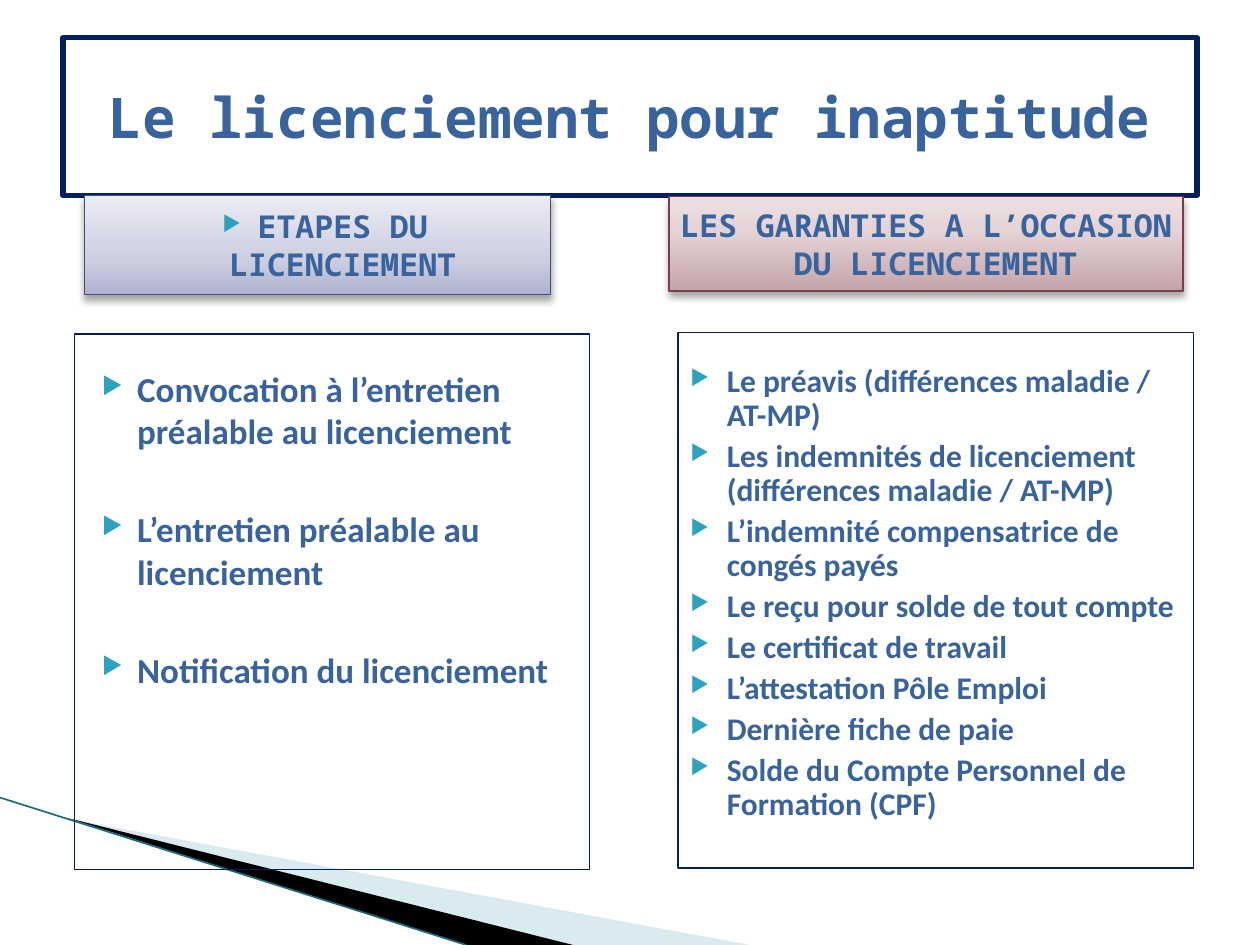
from dataclasses import dataclass
from typing import Optional

from lxml.etree import SubElement
from pptx import Presentation
from pptx.dml.color import RGBColor
from pptx.enum.shapes import MSO_CONNECTOR, MSO_SHAPE
from pptx.enum.text import MSO_ANCHOR, PP_ALIGN
from pptx.oxml import parse_xml
from pptx.oxml.ns import nsdecls, qn
from pptx.util import Pt

PX = 9144  # EMU per px, 100 px to the inch


@dataclass(frozen=True)
class Theme:
    text: str = "39639D"
    navy: str = "002060"
    bullet: str = "2DA2BF"
    ribbon_light: str = "A0CBDC"
    ribbon_dark: str = "000000"
    ribbon_edge: str = "1B6C80"
    heading_font: str = "Noto Sans Mono"
    body_font: str = "Calibri"
    title_size: int = 32
    heading_size: int = 18
    steps_size: int = 20
    guarantees_size: int = 18


@dataclass(frozen=True)
class Para:
    text: str
    margin: int = 0
    hanging: int = 0
    bullet: bool = False
    centred: bool = True
    before: float = 0
    spacing: Optional[float] = None


@dataclass(frozen=True)
class Panel:
    box: tuple[int, int, int, int]
    paras: list[Para]
    font: str
    size: int
    line: str
    line_width: float = 0.75
    top_inset: int = 5
    anchor: MSO_ANCHOR = MSO_ANCHOR.MIDDLE
    wrap: bool = True
    gradient: tuple[tuple[int, str], ...] = ()


@dataclass(frozen=True)
class Ribbon:
    points: list[tuple[int, int]]
    color: str
    opacity: int = 100


T = Theme()


def bullet_list(texts: list[str], margin: int, hanging: int, before: float,
                spacing: Optional[float] = None) -> list[Para]:
    return [Para(text, margin, hanging, True, False, before if i else 0, spacing)
            for i, text in enumerate(texts)]


RIBBONS = [
    Ribbon([(55, 650), (595, 750), (456, 750)], T.ribbon_light, 40),
    Ribbon([(53, 649), (455, 750), (370, 750)], T.ribbon_dark),
]

PANELS = [
    Panel((50, 30, 900, 125), [Para("Le licenciement pour inaptitude")],
          T.heading_font, T.title_size, T.navy, line_width=3),
    Panel((67, 155, 370, 79), [Para("ETAPES DU LICENCIEMENT", 40, 28, True)],
          T.heading_font, T.heading_size, "474B78",
          gradient=((0, "ECECF4"), (65, "CDCEE0"), (100, "AFB2D0"))),
    Panel((531, 156, 408, 75),
          [Para("LES GARANTIES A L’OCCASION"), Para("DU LICENCIEMENT", margin=15)],
          T.heading_font, T.heading_size, "7D3C4A", wrap=False,
          gradient=((0, "EEE0E2"), (35, "E5D4D7"), (100, "C4A5A9"))),
    Panel((59, 265, 409, 425),
          bullet_list(["Convocation à l’entretien préalable au licenciement",
                       "L’entretien préalable au licenciement",
                       "Notification du licenciement"], 40, 28, before=32),
          T.body_font, T.steps_size, T.navy,
          top_inset=27, anchor=MSO_ANCHOR.TOP),
    Panel((538, 264, 409, 425),
          bullet_list(["Le préavis (différences maladie / AT-MP)",
                       "Les indemnités de licenciement (différences maladie / AT-MP)",
                       "L’indemnité compensatrice de congés payés",
                       "Le reçu pour solde de tout compte",
                       "Le certificat de travail",
                       "L’attestation Pôle Emploi",
                       "Dernière fiche de paie",
                       "Solde du Compte Personnel de Formation (CPF)"],
                      29, 29, before=4, spacing=0.9),
          T.body_font, T.guarantees_size, T.navy,
          top_inset=26, anchor=MSO_ANCHOR.TOP),
]


def rgb(color: str) -> RGBColor:
    return RGBColor.from_string(color)


def draw_ribbon(slide, ribbon: Ribbon) -> None:
    builder = slide.shapes.build_freeform(*ribbon.points[0], scale=PX)
    builder.add_line_segments(ribbon.points[1:], close=True)
    s = builder.convert_to_shape()
    s.shadow.inherit = False
    s.fill.solid()
    s.fill.fore_color.rgb = rgb(ribbon.color)
    s.line.fill.background()
    if ribbon.opacity < 100:
        color = s.fill._xPr.find(qn("a:solidFill"))[0]
        SubElement(color, qn("a:alpha"), val=str(ribbon.opacity * 1000))


def draw_ribbon_edge(slide) -> None:
    line = slide.shapes.add_connector(MSO_CONNECTOR.STRAIGHT,
                                      0, 633 * PX, 370 * PX, 750 * PX)
    line.line.color.rgb = rgb(T.ribbon_edge)
    line.line.width = Pt(0.95)
    SubElement(line._element.spPr, qn("a:effectLst"))


def add_gradient_and_shadow(s, stops: tuple[tuple[int, str], ...]) -> None:
    """Fill from top to bottom and cast a soft shadow downwards."""
    gs = "".join(f'<a:gs pos="{pos * 1000}"><a:srgbClr val="{color}"/></a:gs>'
                 for pos, color in stops)
    fill = parse_xml(f'<a:gradFill {nsdecls("a")} rotWithShape="1"><a:gsLst>{gs}</a:gsLst>'
                     '<a:lin ang="5400000" scaled="0"/></a:gradFill>')
    sp_pr = s._element.spPr
    sp_pr.replace(sp_pr.find(qn("a:noFill")), fill)
    shadow = SubElement(sp_pr.find(qn("a:effectLst")), qn("a:outerShdw"),
                        blurRad=str(Pt(4)), dist=str(Pt(3)), dir="5400000",
                        rotWithShape="0")
    color = SubElement(shadow, qn("a:srgbClr"), val="000000")
    SubElement(color, qn("a:alpha"), val="35000")


def format_paragraph(p, para: Para, font: str, size: int) -> None:
    p_pr = p._p.get_or_add_pPr()
    p_pr.set("marL", str(para.margin * PX))
    p_pr.set("indent", str(-para.hanging * PX))
    if para.bullet:
        color = SubElement(p_pr, qn("a:buClr"))
        SubElement(color, qn("a:srgbClr"), val=T.bullet)
        SubElement(p_pr, qn("a:buSzPct"), val="68000")
        SubElement(p_pr, qn("a:buChar"), char="▶")
    p.alignment = PP_ALIGN.CENTER if para.centred else PP_ALIGN.LEFT
    p.space_before = Pt(para.before)
    if para.spacing:
        p.line_spacing = para.spacing
    p.text = para.text
    for r in p.runs:
        r.font.name = font
        r.font.size = Pt(size)
        r.font.bold = True
        r.font.color.rgb = rgb(T.text)


def draw_panel(slide, panel: Panel) -> None:
    s = slide.shapes.add_shape(MSO_SHAPE.RECTANGLE, *(v * PX for v in panel.box))
    s.shadow.inherit = False
    s.fill.background()
    s.line.color.rgb = rgb(panel.line)
    s.line.width = Pt(panel.line_width)
    if panel.gradient:
        add_gradient_and_shadow(s, panel.gradient)
    tf = s.text_frame
    tf.word_wrap = panel.wrap
    tf.vertical_anchor = panel.anchor
    tf.margin_left = tf.margin_right = 10 * PX
    tf.margin_top = panel.top_inset * PX
    tf.margin_bottom = 5 * PX
    for i, para in enumerate(panel.paras):
        p = tf.add_paragraph() if i else tf.paragraphs[0]
        format_paragraph(p, para, panel.font, panel.size)


def main() -> None:
    prs = Presentation()
    prs.slide_width, prs.slide_height = 1000 * PX, 750 * PX
    slide = prs.slides.add_slide(prs.slide_layouts[6])
    for ribbon in RIBBONS:
        draw_ribbon(slide, ribbon)
    draw_ribbon_edge(slide)
    for panel in PANELS:
        draw_panel(slide, panel)
    prs.save("out.pptx")


if __name__ == "__main__":
    main()
